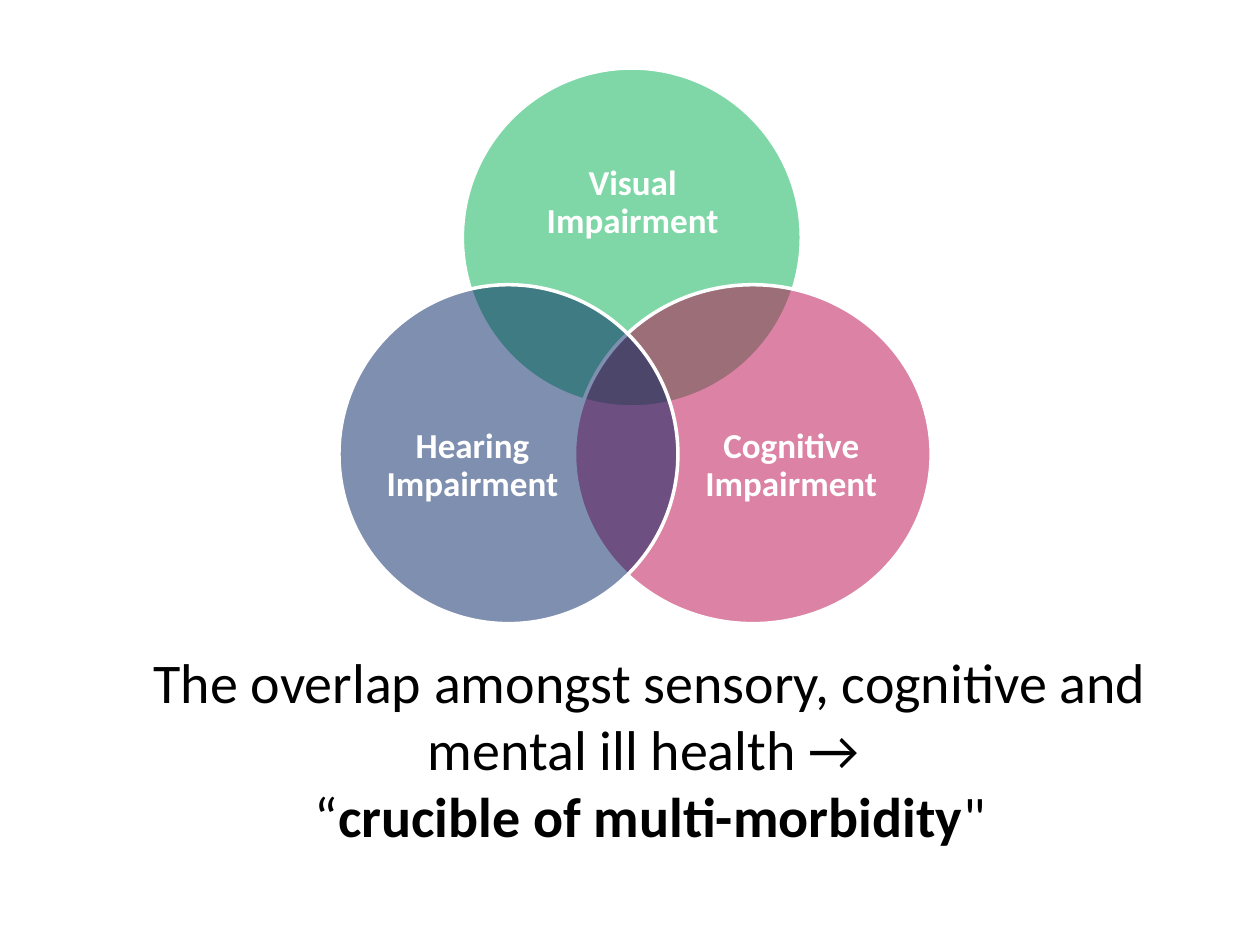
from lxml.etree import SubElement
from pptx import Presentation
from pptx.dml.color import RGBColor
from pptx.enum.shapes import MSO_SHAPE
from pptx.enum.text import MSO_ANCHOR, PP_ALIGN
from pptx.oxml.ns import qn
from pptx.util import Pt


def color(hex_str):
    return RGBColor.from_string(hex_str)


def add_run(p, text, size=20, bold=False, fill="FFFFFF"):
    r = p.add_run()
    r.text = text
    r.font.name = "Calibri"
    r.font.size = Pt(size)
    r.font.bold = bold
    r.font.color.rgb = color(fill)


prs = Presentation()
prs.slide_width, prs.slide_height = Pt(720), Pt(540)
s = prs.slides.add_slide(prs.slide_layouts[6])

# Venn circles: fill, box of the circle, label, box of the label
circles = [
    ("00B050", (264.2, 38.9, 193.7, 193.7), "Visual Impairment", (290.2, 72.7, 142.6, 87.1)),
    ("BA064B", (328.3, 162.7, 203.8, 193.7), "Cognitive Impairment", (391, 213.1, 122.4, 106.6)),
    ("002060", (193.7, 162.7, 193.7, 193.7), "Hearing Impairment", (211.7, 213.1, 116.6, 106.6)),
]
for fill, circle_box, label, label_box in circles:
    sp = s.shapes.add_shape(MSO_SHAPE.OVAL, *map(Pt, circle_box))
    sp.shadow.inherit = False
    sp.fill.solid()
    sp.fill.fore_color.rgb = color(fill)
    srgb = sp.fill._xPr.find(".//" + qn("a:srgbClr"))
    SubElement(srgb, qn("a:alpha"), val="50000")
    sp.line.color.rgb = color("FFFFFF")
    sp.line.width = Pt(2)

    tf = s.shapes.add_textbox(*map(Pt, label_box)).text_frame
    tf.word_wrap = True
    tf.vertical_anchor = MSO_ANCHOR.MIDDLE
    tf.margin_left = tf.margin_top = tf.margin_right = tf.margin_bottom = 0
    p = tf.paragraphs[0]
    p.alignment = PP_ALIGN.CENTER
    p.line_spacing = 0.9
    p.space_after = Pt(7)
    add_run(p, label, bold=True)

# Conclusion
tf = s.shapes.add_textbox(Pt(54), Pt(366.5), Pt(635), Pt(145.4)).text_frame
tf.word_wrap = True
conclusion = [
    [("The overlap amongst sensory, cognitive and mental ill health → ", False)],
    [("“", False), ("crucible of multi-morbidity", True), ('"', False)],
]
for i, runs in enumerate(conclusion):
    p = tf.add_paragraph() if i else tf.paragraphs[0]
    p.alignment = PP_ALIGN.CENTER
    for text, bold in runs:
        add_run(p, text, size=32, bold=bold, fill="000000")

prs.save("out.pptx")
